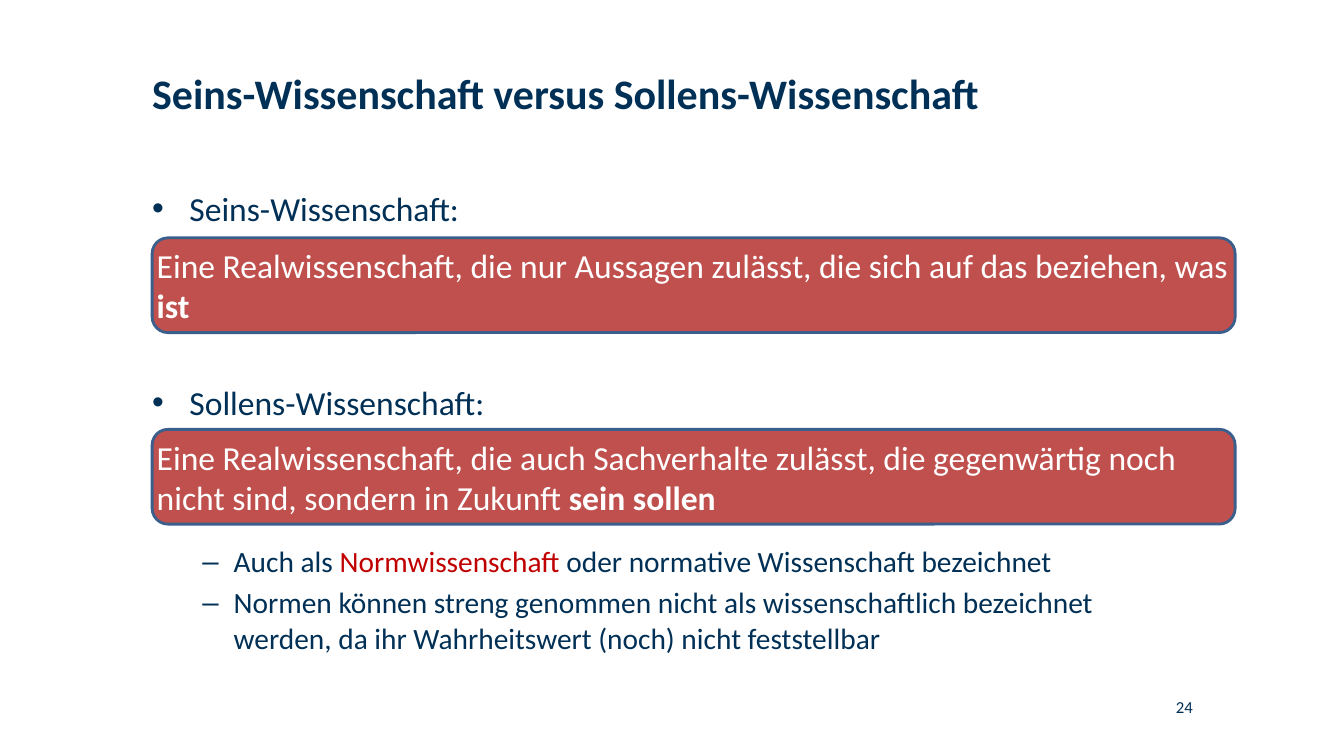
"""Build the slide on Seins-Wissenschaft versus Sollens-Wissenschaft."""
import pptx
import pptx.util
import pptx.dml.color
import pptx.enum.shapes
import pptx.enum.text
import pptx.oxml
import pptx.oxml.ns

Inches = pptx.util.Inches
Pt = pptx.util.Pt
RGBColor = pptx.dml.color.RGBColor
ALIGN = pptx.enum.text.PP_ALIGN
ANCHOR = pptx.enum.text.MSO_ANCHOR

NAVY = RGBColor(0x00, 0x30, 0x56)
RED = RGBColor(0xC0, 0x00, 0x00)
BRICK = RGBColor(0xC0, 0x50, 0x4D)
STEEL = RGBColor(0x3A, 0x5F, 0x8C)
WHITE = RGBColor(0xFF, 0xFF, 0xFF)
LEFT = Inches(1.51)
WIDTH = Inches(10.31)


def write(shape, paras, size=24, color=NAVY, align=ALIGN.LEFT,
          anchor=ANCHOR.TOP, bullet=None, indent=0, hang=0, level=0):
    """Fill a shape with paragraphs of (text, bold, color) runs."""
    frame = shape.text_frame
    frame.word_wrap = True
    frame.auto_size = pptx.enum.text.MSO_AUTO_SIZE.NONE
    frame.vertical_anchor = anchor
    frame.margin_left = frame.margin_right = 0
    frame.margin_top = frame.margin_bottom = 0
    for i, runs in enumerate(paras):
        para = frame.add_paragraph() if i else frame.paragraphs[0]
        para.alignment = align
        para.level = level
        para.space_before = Pt(size * 0.2)
        if bullet:
            props = para._p.get_or_add_pPr()
            props.set("marL", str(Inches(indent)))
            props.set("indent", str(-Inches(hang)))
            for tag, key, value in (("buFont", "typeface", "Arial"),
                                    ("buChar", "char", bullet)):
                mark = pptx.oxml.parse_xml(
                    f'<a:{tag} {pptx.oxml.ns.nsdecls("a")}/>')
                mark.set(key, value)
                props.append(mark)
        for text, bold, tint in runs:
            run = para.add_run()
            run.text = text
            run.font.name = "Calibri"
            run.font.size = Pt(size)
            run.font.bold = bold
            run.font.color.rgb = tint or color


deck = pptx.Presentation()
deck.slide_width = Inches(13.34)
deck.slide_height = Inches(7.5)
slide = deck.slides.add_slide(deck.slide_layouts[5])
shapes = slide.shapes

title = shapes.title
title.left, title.top = LEFT, Inches(0.67)
title.width, title.height = Inches(8.39), Inches(1.37)
write(title, [[("Seins-Wissenschaft versus Sollens-Wissenschaft", True, None)]],
      size=30)

terms = [
    (1.86, 2.36, "Seins-Wissenschaft:",
     "Eine Realwissenschaft, die nur Aussagen zulässt, "
     "die sich auf das beziehen, was ", "ist"),
    (3.79, 4.26, "Sollens-Wissenschaft:",
     "Eine Realwissenschaft, die auch Sachverhalte zulässt, die gegenwärtig "
     "noch nicht sind, sondern in Zukunft ", "sein sollen"),
]
for top, below, term, text, stress in terms:
    head = shapes.add_textbox(LEFT, Inches(top), WIDTH, Inches(0.58))
    write(head, [[(term, False, None)]], bullet="•", indent=0.37, hang=0.37)
    box = shapes.add_shape(pptx.enum.shapes.MSO_SHAPE.ROUNDED_RECTANGLE,
                           LEFT, Inches(below), Inches(10.75), Inches(0.94))
    box.shadow.inherit = False
    box.fill.solid()
    box.fill.fore_color.rgb = BRICK
    box.line.color.rgb = STEEL
    box.line.width = Pt(2)
    write(box, [[(text, False, None), (stress, True, None)]],
          color=WHITE, anchor=ANCHOR.MIDDLE)

notes = shapes.add_textbox(LEFT, Inches(5.39), WIDTH, Inches(1.2))
write(notes, [
    [("Auch als ", False, None), ("Normwissenschaft", False, RED),
     (" oder normative Wissenschaft bezeichnet", False, None)],
    [("Normen können streng genommen nicht als wissenschaftlich bezeichnet "
      "werden, da ihr Wahrheitswert (noch) nicht feststellbar", False, None)],
], size=21, bullet="–", indent=0.81, hang=0.31, level=1)

number = shapes.add_textbox(Inches(10.3), Inches(6.91), Inches(1.54), Inches(0.2))
write(number, [[("24", False, None)]], size=12, align=ALIGN.RIGHT)

deck.save("out.pptx")
